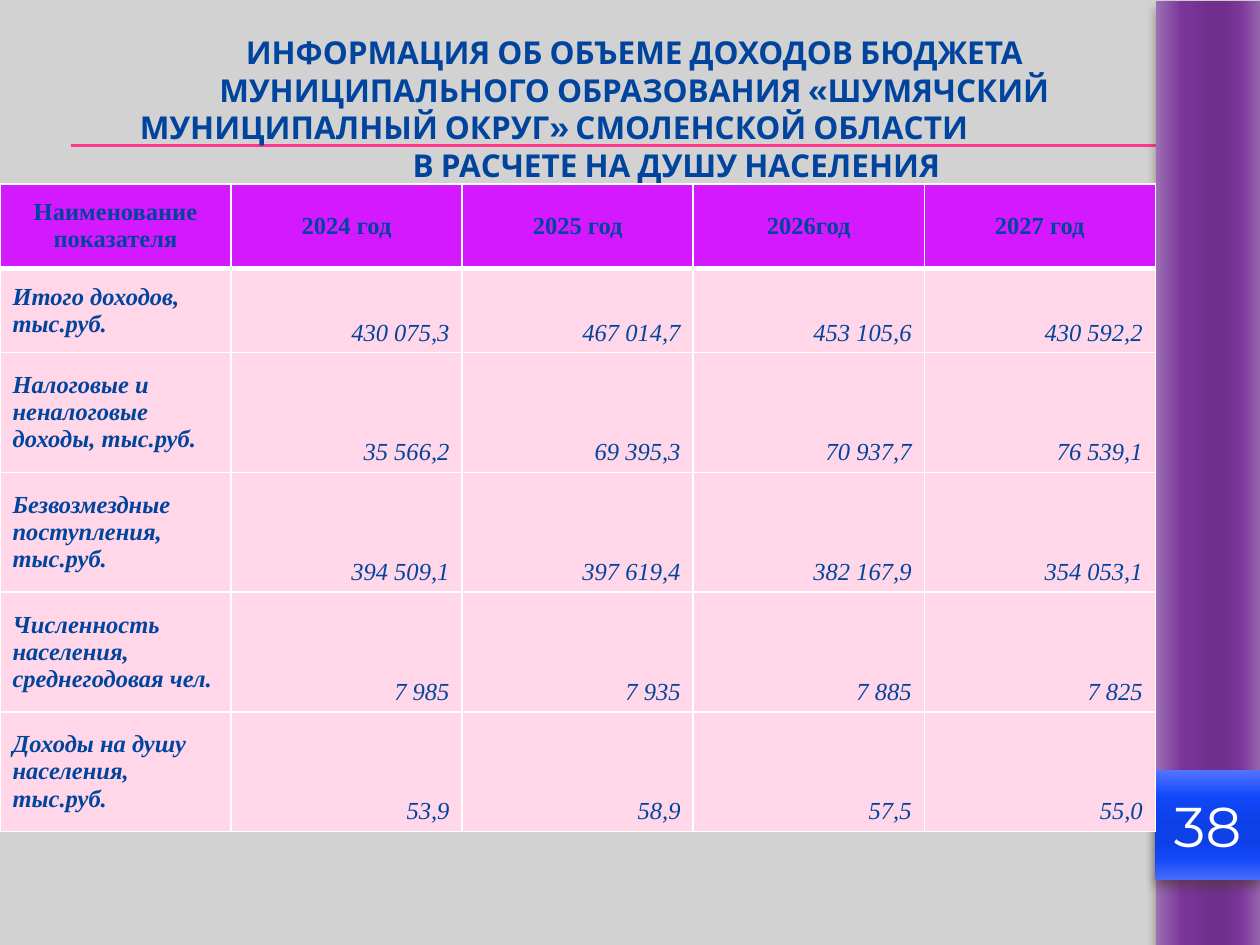
"""Build the slide on municipal budget income per head of population."""
import dataclasses

import lxml.etree
import pptx
import pptx.dml.color
import pptx.enum.shapes
import pptx.enum.text
import pptx.oxml.ns
import pptx.util

Inches = pptx.util.Inches
Align = pptx.enum.text.PP_ALIGN
Anchor = pptx.enum.text.MSO_ANCHOR
qn = pptx.oxml.ns.qn


@dataclasses.dataclass(frozen=True)
class Theme:
    """Colours, fonts and type sizes of the slide."""
    background: str = "D2D2D2"
    rule: str = "FF388C"
    text: str = "00449E"
    outline: str = "4E005F"
    white: str = "FFFFFF"
    header: str = "D519FF"
    body: str = "FFD7E8"
    shadow: str = "4E3B30"
    positions: tuple = (0, 25, 50, 65, 80, 100)
    band: tuple = ("9C6FB3", "7A3599", "71308E", "71308E", "7A3598", "9566AD")
    badge: tuple = ("5374FF", "1147F8", "0E40E7", "0E40E7", "1147F6", "476AFD")
    title_font: str = "Cabin"
    table_font: str = "Times New Roman"
    number_font: str = "Montserrat"
    title_size: int = 18
    table_size: int = 14
    number_size: int = 32


THEME = Theme()
TITLE_LINES = [
    ("ИНФОРМАЦИЯ ОБ ОБЪЕМЕ ДОХОДОВ БЮДЖЕТА МУНИЦИПАЛЬНОГО ОБРАЗОВАНИЯ «ШУМЯЧСКИЙ", Align.CENTER, 0),
    ("МУНИЦИПАЛНЫЙ ОКРУГ» СМОЛЕНСКОЙ ОБЛАСТИ", Align.LEFT, 0.03),
    ("В РАСЧЕТЕ НА ДУШУ НАСЕЛЕНИЯ", Align.CENTER, 0.67),
]
ROWS = [
    ("Наименование показателя", "2024 год", "2025 год", "2026год", "2027 год"),
    ("Итого доходов, тыс.руб.", "430 075,3", "467 014,7", "453 105,6", "430 592,2"),
    ("Налоговые и неналоговые доходы, тыс.руб.", "35 566,2", "69 395,3", "70 937,7", "76 539,1"),
    ("Безвозмездные поступления, тыс.руб.", "394 509,1", "397 619,4", "382 167,9", "354 053,1"),
    ("Численность населения, среднегодовая чел.", "7 985", "7 935", "7 885", "7 825"),
    ("Доходы на душу населения, тыс.руб.", "53,9", "58,9", "57,5", "55,0"),
]
ROW_HEIGHTS = [0.67, 0.67, 0.95, 0.95, 0.95, 0.95]
TABLE_WIDTH = 9.17


def rgb(value):
    """Return a colour object for a hex string."""
    return pptx.dml.color.RGBColor.from_string(value)


def add_child(parent, tag, **attributes):
    """Append an XML child with the given attributes."""
    child = lxml.etree.SubElement(parent, qn(tag))
    for name, value in attributes.items():
        child.set(name, str(value))
    return child


def format_font(font, color, **values):
    """Set the colour and the given attributes of a font."""
    for name, value in values.items():
        setattr(font, name, value)
    font.color.rgb = rgb(color)


def add_rule(slide, top):
    """Add a thin horizontal rule."""
    rule = slide.shapes.add_connector(
        pptx.enum.shapes.MSO_CONNECTOR.STRAIGHT,
        Inches(0.56), Inches(top), Inches(10), Inches(top))
    rule.line.color.rgb = rgb(THEME.rule)
    rule.line.width = pptx.util.Pt(0.75)
    add_child(rule.element.spPr, "a:effectLst")


def add_gradient_panel(slide, box, colors, rotation=0):
    """Add a shadowed rectangle with a many-stop gradient."""
    panel = slide.shapes.add_shape(
        pptx.enum.shapes.MSO_SHAPE.RECTANGLE, *map(Inches, box))
    panel.rotation = rotation
    panel.line.fill.background()
    panel.fill.gradient()
    panel.fill.gradient_angle = 270
    stops = panel.element.spPr.find(".//" + qn("a:gsLst"))
    for stop in list(stops):
        stops.remove(stop)
    for position, color in zip(THEME.positions, colors):
        stop = add_child(stops, "a:gs", pos=position * 1000)
        add_child(stop, "a:srgbClr", val=color)
    effects = add_child(panel.element.spPr, "a:effectLst")
    shadow = add_child(effects, "a:outerShdw", blurRad=pptx.util.Pt(6),
                       dist=pptx.util.Pt(4), dir=90 * 60000, rotWithShape=0)
    color = add_child(shadow, "a:srgbClr", val=THEME.shadow)
    add_child(color, "a:alpha", val=60000)
    return panel


def add_page_number(slide, number):
    """Add the blue badge with the page number."""
    badge = add_gradient_panel(slide, (9.17, 6.11, 0.83, 0.87), THEME.badge)
    frame = badge.text_frame
    frame.margin_left = frame.margin_right = 0
    frame.vertical_anchor = Anchor.MIDDLE
    paragraph = frame.paragraphs[0]
    paragraph.alignment = Align.CENTER
    run = paragraph.add_run()
    run.text = number
    format_font(run.font, THEME.white, name=THEME.number_font,
                size=pptx.util.Pt(THEME.number_size))


def fill_title(slide):
    """Place the title in front of the rules and fill in its lines."""
    title = slide.shapes.title
    title.element.getparent().append(title.element)
    for name, value in zip(("left", "top", "width", "height"), (0.98, 0.21, 8.11, 1.31)):
        setattr(title, name, Inches(value))
    frame = title.text_frame
    frame.word_wrap = True
    frame.auto_size = pptx.enum.text.MSO_AUTO_SIZE.NONE
    frame.vertical_anchor = Anchor.TOP
    for index, (text, alignment, indent) in enumerate(TITLE_LINES):
        paragraph = frame.add_paragraph() if index else frame.paragraphs[0]
        paragraph.alignment = alignment
        paragraph.line_spacing = 1.0
        paragraph._p.get_or_add_pPr().set("marL", str(Inches(indent)))
        run = paragraph.add_run()
        run.text = text
        format_font(run.font, THEME.text, name=THEME.title_font, bold=True,
                    size=pptx.util.Pt(THEME.title_size))
        properties = run._r.get_or_add_rPr()
        outline = add_child(properties, "a:ln", w=pptx.util.Pt(0.75))
        add_child(add_child(outline, "a:solidFill"), "a:srgbClr", val=THEME.outline)
        properties.insert(0, outline)


def set_borders(cell, bottom_width):
    """Give a cell white borders with the given bottom width."""
    properties = cell._tc.get_or_add_tcPr()
    widths = {"a:lnL": 1, "a:lnR": 1, "a:lnT": 1, "a:lnB": bottom_width}
    for index, (tag, width) in enumerate(widths.items()):
        border = add_child(properties, tag, w=pptx.util.Pt(width))
        add_child(add_child(border, "a:solidFill"), "a:srgbClr", val=THEME.white)
        properties.insert(index, border)


def fill_cell(cell, text, is_header, is_label):
    """Write and format one table cell."""
    cell.fill.solid()
    cell.fill.fore_color.rgb = rgb(THEME.header if is_header else THEME.body)
    cell.vertical_anchor = Anchor.MIDDLE if is_header or is_label else Anchor.BOTTOM
    paragraph = cell.text_frame.paragraphs[0]
    paragraph.alignment = Align.CENTER if is_header else Align.LEFT if is_label else Align.RIGHT
    run = paragraph.add_run()
    run.text = text
    format_font(run.font, THEME.text, name=THEME.table_font,
                size=pptx.util.Pt(THEME.table_size),
                bold=is_header or is_label, italic=not is_header)
    set_borders(cell, 3 if is_header else 1)


def add_income_table(slide):
    """Add the table of income by year."""
    table = slide.shapes.add_table(
        len(ROWS), len(ROWS[0]), 0, Inches(1.46),
        Inches(TABLE_WIDTH), Inches(sum(ROW_HEIGHTS))).table
    for row, height in zip(table.rows, ROW_HEIGHTS):
        row.height = Inches(height)
    for row_index, texts in enumerate(ROWS):
        for column_index, text in enumerate(texts):
            fill_cell(table.cell(row_index, column_index), text,
                      row_index == 0, column_index == 0)


def main():
    """Build and save the presentation."""
    presentation = pptx.Presentation()
    presentation.slide_width = Inches(10)
    presentation.slide_height = Inches(7.5)
    slide = presentation.slides.add_slide(presentation.slide_layouts[5])
    slide.background.fill.solid()
    slide.background.fill.fore_color.rgb = rgb(THEME.background)
    for top in (1.15, 1.16):
        add_rule(slide, top)
    add_gradient_panel(slide, (5.84, 3.34, 7.5, 0.83), THEME.band, rotation=270)
    add_page_number(slide, "38")
    fill_title(slide)
    add_income_table(slide)
    presentation.save("out.pptx")


if __name__ == "__main__":
    main()
